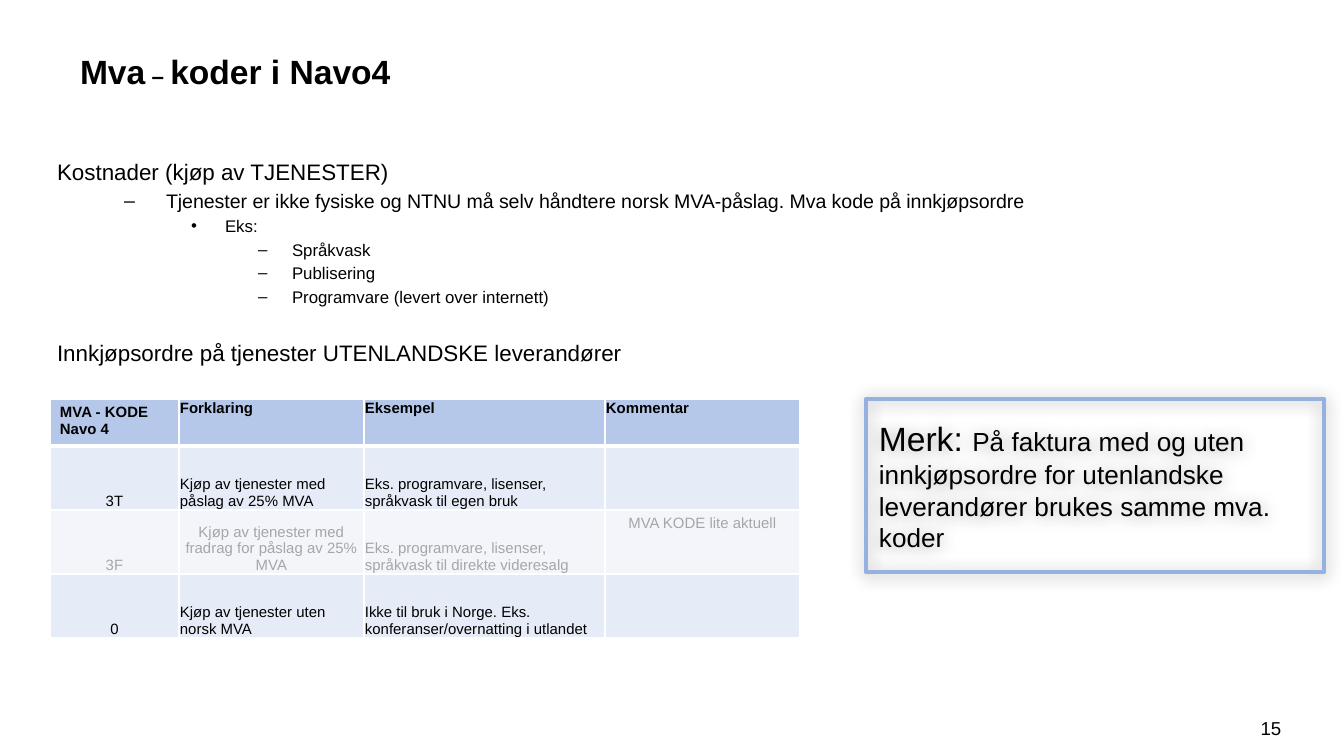
from lxml import etree
from pptx import Presentation, util as u
from pptx.dml.color import RGBColor
from pptx.enum import shapes, text
from pptx.oxml import ns

SCALE = 914400 / 134.4  # EMU in one px
LEFT, CENTER = text.PP_ALIGN.LEFT, text.PP_ALIGN.CENTER
TOP, MIDDLE, BOTTOM = (text.MSO_ANCHOR.TOP, text.MSO_ANCHOR.MIDDLE,
                       text.MSO_ANCHOR.BOTTOM)
BLACK, GREY, WHITE = "000000", "A6A6A6", "FFFFFF"


def px(length):
    return u.Emu(round(length * SCALE))


def color(value):
    return RGBColor.from_string(value)


def child(parent, tag, **attributes):
    node = etree.SubElement(parent, ns.qn(tag))
    for name, value in attributes.items():
        node.set(name, str(value))
    return node


def write(para, words, size=8, bold=False, ink=BLACK, align=LEFT, before=0):
    para.alignment = align
    para.space_before = u.Pt(before)
    span = para.add_run()
    span.text = words
    span.font.name = "Arial"
    span.font.size = u.Pt(size)
    span.font.bold = bold
    span.font.color.rgb = color(ink)


class Page:
    """Holds the style and the current slide."""
    border = "96B0DF"
    header_fill = "B6C8E9"
    row_fills = ("E5EBF7", "F3F5FB")

    def __init__(self, deck):
        self.slide = deck.slides.add_slide(deck.slide_layouts[1])

    def frame(self, box, anchor, insets=(13, 7, 13, 7)):
        frame = box.text_frame
        frame.word_wrap = True
        frame.auto_size = text.MSO_AUTO_SIZE.NONE
        frame.vertical_anchor = anchor
        (frame.margin_left, frame.margin_top,
         frame.margin_right, frame.margin_bottom) = map(px, insets)
        return frame

    def place(self, box, *bounds):
        box.left, box.top, box.width, box.height = map(px, bounds)

    def title(self, spans, *bounds):
        box = self.slide.shapes.title
        self.place(box, *bounds)
        para = self.frame(box, MIDDLE).paragraphs[0]
        for words, size in spans:
            write(para, words, size, bold=True)

    def outline(self, items, *bounds):
        box = self.slide.placeholders[1]
        self.place(box, *bounds)
        frame = self.frame(box, TOP, (13, 10, 13, 7))
        # level: bullet, text indent, hanging indent, size
        levels = [(None, 0, 0, 12), ("–", 109, 42, 10.5),
                  ("•", 168, 34, 9), ("–", 235, 34, 9)]
        for index, (level, words, gap) in enumerate(items):
            para = frame.add_paragraph() if index else frame.paragraphs[0]
            bullet, indent, hanging, size = levels[level]
            para.level = level
            properties = para._p.get_or_add_pPr()
            properties.set("marL", str(px(indent)))
            properties.set("indent", str(-px(hanging)))
            if bullet:
                child(properties, "a:buChar", char=bullet)
            else:
                child(properties, "a:buNone")
            before = size * 0.2 + gap if index else 0
            write(para, words, size, before=before)

    def cell(self, cell, fill, words="", anchor=TOP, insets=(1, 1, 1, 0),
             top=1, bottom=1, **style):
        (cell.margin_left, cell.margin_top,
         cell.margin_right, cell.margin_bottom) = map(px, insets)
        cell.vertical_anchor = anchor
        properties = cell._tc.get_or_add_tcPr()
        for side, width in zip("LRTB", (1, 1, top, bottom)):
            line = child(properties, "a:ln" + side, w=u.Pt(width))
            child(child(line, "a:solidFill"), "a:srgbClr", val=WHITE)
        cell.fill.solid()
        cell.fill.fore_color.rgb = color(fill)
        if words:
            write(cell.text_frame.paragraphs[0], words, **style)

    def table(self, header, rows, left, top, widths, heights):
        table = self.slide.shapes.add_table(
            len(heights), len(widths), px(left), px(top),
            px(sum(widths)), px(sum(heights))).table
        table.first_row = table.horz_banding = False
        for column, width in zip(table.columns, widths):
            column.width = px(width)
        for row, height in zip(table.rows, heights):
            row.height = px(height)
        roomy, tight = (10, 5, 10, 5), (1, 1, 1, 0)
        for col, words in enumerate(header):
            self.cell(table.cell(0, col), self.header_fill, words, bold=True,
                      bottom=3, insets=tight if col else roomy)
        for row, (ink, centered, values) in enumerate(rows, 1):
            for col, words in enumerate(values):
                comment = col == len(values) - 1
                self.cell(table.cell(row, col), self.row_fills[(row - 1) % 2],
                          words, ink=ink,
                          anchor=TOP if comment else BOTTOM,
                          insets=roomy if comment else tight,
                          align=CENTER if col in centered else LEFT,
                          top=3 if row == 1 else 1)

    def note(self, spans, *bounds):
        box = self.slide.shapes.add_shape(
            shapes.MSO_SHAPE.RECTANGLE, *map(px, bounds))
        box.fill.background()
        box.line.color.rgb = color(self.border)
        box.line.width = u.Pt(2.25)
        # Soft shadow below the frame
        box.shadow.inherit = False
        effects = box._element.spPr.find(ns.qn("a:effectLst"))
        shadow = child(effects, "a:outerShdw", blurRad=u.Pt(9), dist=u.Pt(1),
                       dir=90 * 60000, rotWithShape=0)
        child(child(shadow, "a:srgbClr", val=BLACK), "a:alpha", val=35000)
        para = self.frame(box, MIDDLE).paragraphs[0]
        for words, size in spans:
            write(para, words, size)

    def number(self, words, *bounds):
        box = self.slide.shapes.add_textbox(*map(px, bounds))
        frame = self.frame(box, MIDDLE, (0, 0, 0, 0))
        write(frame.paragraphs[0], words, 10, align=CENTER)


def main():
    deck = Presentation()
    deck.slide_width, deck.slide_height = px(1344), px(756)
    page = Page(deck)

    # Slide number, title and bullet list
    page.number("15", 1246, 708, 50, 40)
    page.title([("Mva", 18), (" – ", 12), ("koder i Navo4", 18)],
               67, 44, 1120, 55)
    page.outline([
        (0, "Kostnader (kjøp av TJENESTER)", 0),
        (1, "Tjenester er ikke fysiske og NTNU må selv håndtere norsk "
            "MVA-påslag. Mva kode på innkjøpsordre", 0),
        (2, "Eks:", 0),
        (3, "Språkvask", 0),
        (3, "Publisering", 0),
        (3, "Programvare (levert over internett)", 0),
        (0, "Innkjøpsordre på tjenester UTENLANDSKE leverandører", 15),
    ], 44, 148, 1238, 531)

    # VAT codes: text colour, centred columns, values
    page.table(
        ["MVA - KODE Navo 4", "Forklaring", "Eksempel", "Kommentar"],
        [(BLACK, (0,), ["3T", "Kjøp av tjenester med påslag av 25% MVA",
                        "Eks. programvare, lisenser, språkvask til egen bruk",
                        ""]),
         (GREY, (0, 1, 3), [
             "3F", "Kjøp av tjenester med fradrag for påslag av 25% MVA",
             "Eks. programvare, lisenser, språkvask til direkte videresalg",
             "MVA KODE lite aktuell"]),
         (BLACK, (0,), ["0", "Kjøp av tjenester uten norsk MVA",
                        "Ikke til bruk i Norge. Eks. "
                        "konferanser/overnatting i utlandet", ""])],
        50, 399, [129, 185, 241, 195], [47] + [64] * 3)

    # Framed remark
    page.note([("Merk: ", 18),
               ("På faktura med og uten innkjøpsordre for utenlandske "
                "leverandører brukes samme mva. koder", 14)],
              866, 399, 458, 173)

    deck.save("out.pptx")


if __name__ == "__main__":
    main()
